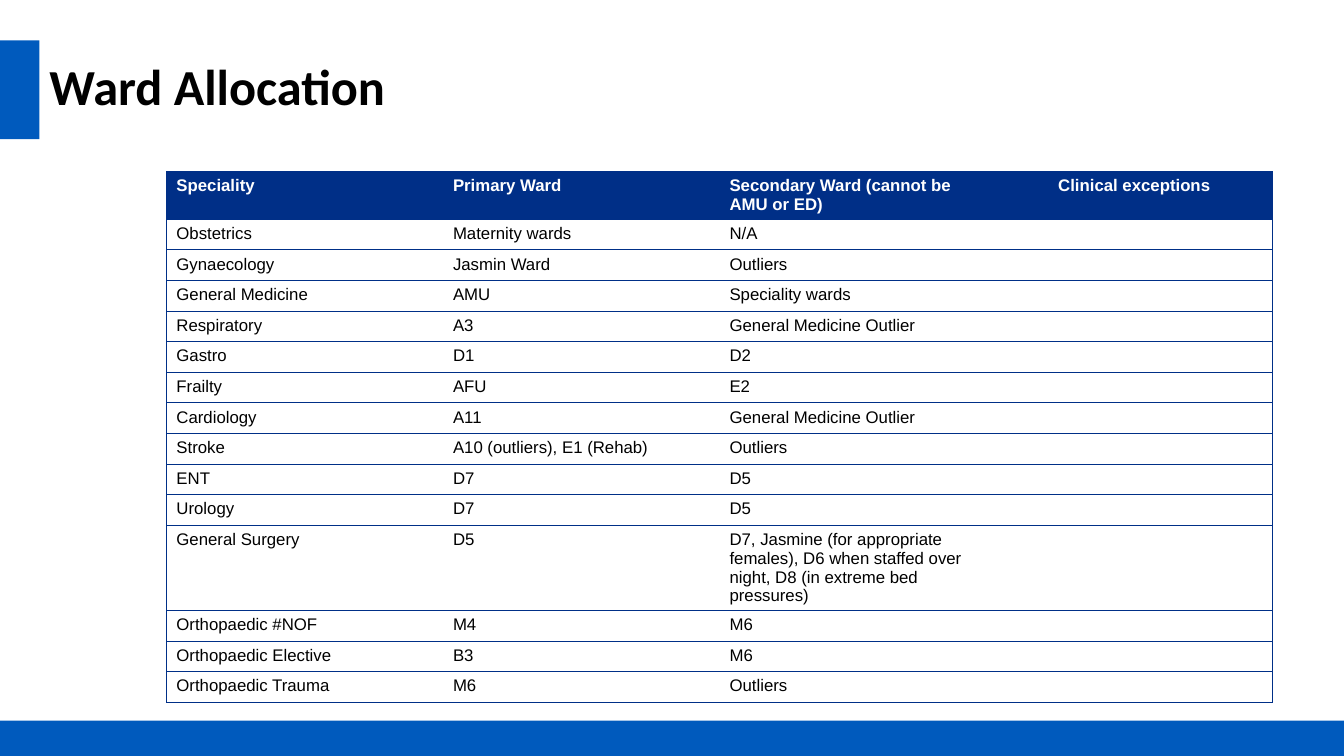
from lxml.etree import SubElement
from pptx import Presentation
from pptx.dml.color import RGBColor
from pptx.enum.shapes import MSO_SHAPE as Shape
from pptx.enum.text import MSO_ANCHOR as Anchor, PP_ALIGN as Align
from pptx.oxml.ns import qn
from pptx.util import Inches, Pt

TITLE = "Ward Allocation"
HEADER = ("Speciality", "Primary Ward", "Secondary Ward (cannot be AMU or ED)",
          "Clinical exceptions")
WARDS = [
    ("Obstetrics", "Maternity wards", "N/A", ""),
    ("Gynaecology", "Jasmin Ward", "Outliers", ""),
    ("General Medicine", "AMU", "Speciality wards", ""),
    ("Respiratory", "A3", "General Medicine Outlier", ""),
    ("Gastro", "D1", "D2", ""),
    ("Frailty", "AFU", "E2", ""),
    ("Cardiology", "A11", "General Medicine Outlier", ""),
    ("Stroke", "A10 (outliers), E1 (Rehab)", "Outliers", ""),
    ("ENT", "D7", "D5", ""),
    ("Urology", "D7", "D5", ""),
    ("General Surgery", "D5",
     "D7, Jasmine (for appropriate females), D6 when staffed over night, "
     "D8 (in extreme bed pressures)", ""),
    ("Orthopaedic #NOF", "M4", "M6", ""),
    ("Orthopaedic Elective", "B3", "M6", ""),
    ("Orthopaedic Trauma", "M6", "Outliers", ""),
]
COLOURS = {"bar": "005ABD", "navy": "002F87", "white": "FFFFFF", "black": "000000"}
WIDTH, HEIGHT = 13.33, 7.5
BARS = [(0, 0.4, 0.39, 0.98), (0, 7.15, WIDTH, 0.35)]
TITLE_BOX = (0.39, 0.4, 10.78, 0.98)
TABLE_LEFT, TABLE_TOP, COLUMN_WIDTH = 1.65, 1.7, 2.743
HEADER_HEIGHT, ROW_HEIGHT = 0.3, 0.24
TITLE_FONT = {"name": "Calibri", "size": Pt(36), "bold": True}
HEADER_FONT = {"name": "Arial", "size": Pt(12), "bold": True}
BODY_FONT = {**HEADER_FONT, "bold": False}


def colour(name):
    return RGBColor.from_string(COLOURS[name])


def format_font(font, values, colour_name):
    for name, value in values.items():
        setattr(font, name, value)
    font.color.rgb = colour(colour_name)


def set_borders(cell, visible):
    """Draw the sides named in visible (L, R, T, B) and hide the others."""
    properties = cell._tc.get_or_add_tcPr()
    for side in "LRTB":
        line = SubElement(properties, qn(f"a:ln{side}"), w=str(Pt(0.5)))
        if side in visible:
            fill = SubElement(line, qn("a:solidFill"))
            SubElement(fill, qn("a:srgbClr"), val=COLOURS["navy"])
        else:
            SubElement(line, qn("a:noFill"))


def fill_cell(cell, text, is_header):
    cell.fill.solid()
    cell.fill.fore_color.rgb = colour("navy" if is_header else "white")
    para = cell.text_frame.paragraphs[0]
    if text:
        span = para.add_run()
        span.text = text
        format_font(span.font, HEADER_FONT if is_header else BODY_FONT,
                    "white" if is_header else "black")
    else:
        SubElement(para._p, qn("a:endParaRPr"), sz="1200")


def add_ward_table(page):
    rows = [HEADER, *WARDS]
    last = len(HEADER) - 1
    height = HEADER_HEIGHT + ROW_HEIGHT * len(WARDS)
    table = page.shapes.add_table(
        len(rows), len(HEADER), Inches(TABLE_LEFT), Inches(TABLE_TOP),
        Inches(COLUMN_WIDTH * len(HEADER)), Inches(height)).table
    table.horz_banding = False
    for column in table.columns:
        column.width = Inches(COLUMN_WIDTH)
    for r, texts in enumerate(rows):
        table.rows[r].height = Inches(ROW_HEIGHT if r else HEADER_HEIGHT)
        for c, text in enumerate(texts):
            cell = table.cell(r, c)
            set_borders(cell, "TB" + ("L" if c == 0 else "R" if c == last else ""))
            fill_cell(cell, text, r == 0)
    table.cell(0, last).text_frame.paragraphs[0].alignment = Align.CENTER


def add_title(page):
    title = page.shapes.title
    title.left, title.top, title.width, title.height = map(Inches, TITLE_BOX)
    title.text_frame.text = TITLE
    title.text_frame.vertical_anchor = Anchor.MIDDLE
    para = title.text_frame.paragraphs[0]
    para.alignment = Align.LEFT
    para.line_spacing = 0.9
    format_font(para.runs[0].font, TITLE_FONT, "black")


def main():
    deck = Presentation()
    deck.slide_width, deck.slide_height = Inches(WIDTH), Inches(HEIGHT)
    page = deck.slides.add_slide(deck.slide_layouts.get_by_name("Title Only"))
    for place in BARS:
        bar = page.shapes.add_shape(Shape.RECTANGLE, *map(Inches, place))
        bar.shadow.inherit = False
        bar.fill.solid()
        bar.fill.fore_color.rgb = colour("bar")
        bar.line.fill.background()
    add_title(page)
    add_ward_table(page)
    deck.save("out.pptx")


if __name__ == "__main__":
    main()
